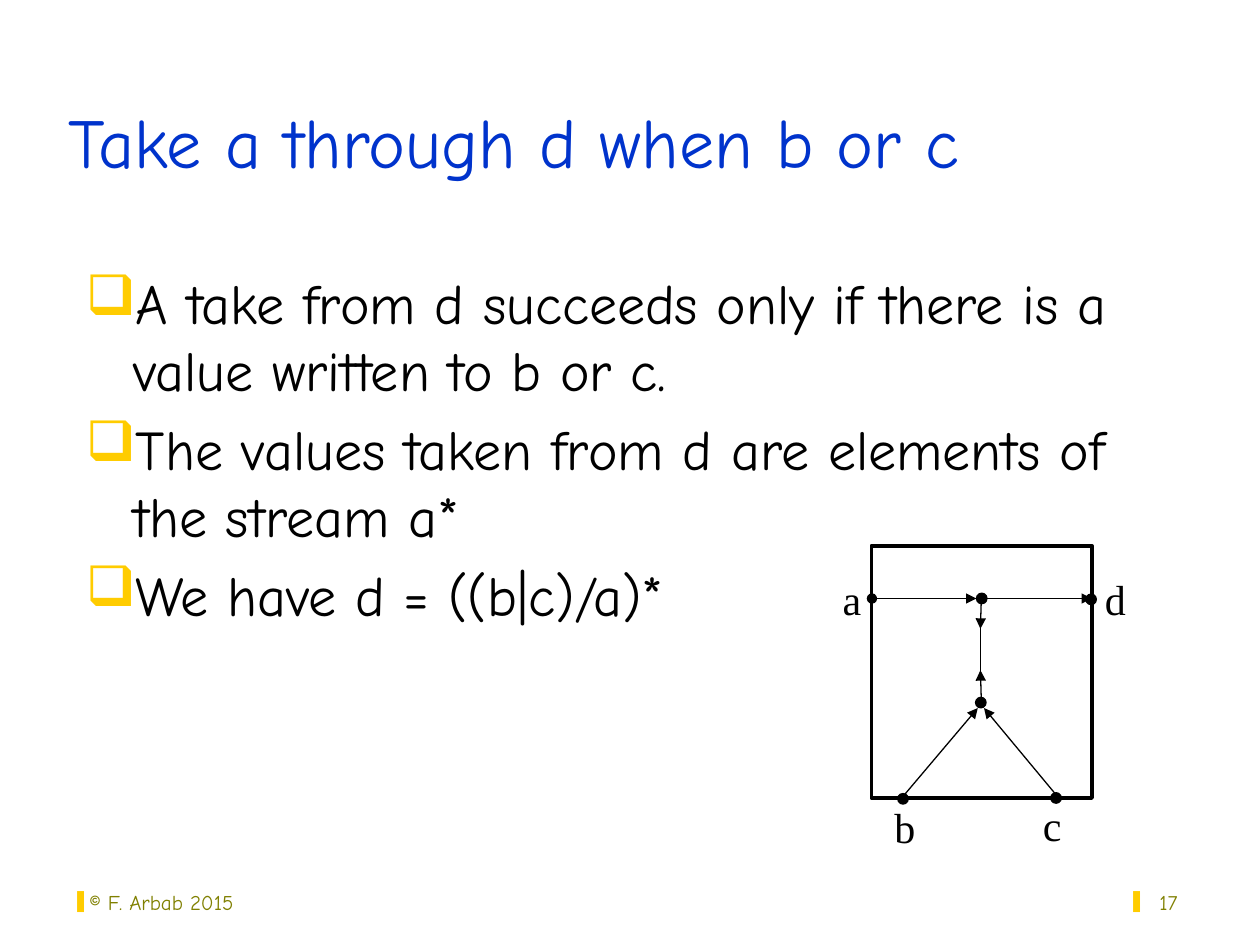
"""Build a slide on taking a through d, with a small channel circuit."""
from lxml.etree import SubElement
from pptx import Presentation
from pptx.dml.color import RGBColor
from pptx.enum.shapes import MSO_CONNECTOR, MSO_SHAPE
from pptx.enum.text import MSO_ANCHOR, PP_ALIGN
from pptx.oxml.ns import qn
from pptx.util import Pt

BLACK = RGBColor(0x00, 0x00, 0x00)
WHITE = RGBColor(0xFF, 0xFF, 0xFF)
BLUE = RGBColor(0x00, 0x33, 0xCC)
OLIVE = RGBColor(0x80, 0x80, 0x00)
GOLD = RGBColor(0xFF, 0xCC, 0x00)
COMIC = "Comic Neue"
ROMAN = "Times New Roman"

POINTS = [
    "A take from d succeeds only if there is a value written to b or c.",
    "The values taken from d are elements of the stream a*",
    "We have d = ((b|c)/a)*",
]
LABELS = [("a", 473.75, 324), ("b", 504, 454.3), ("c", 588.25, 453.6), ("d", 624.25, 324)]
NODES = [(561, 342), (623.5, 342.5), (516, 456.5), (603.5, 456), (560.5, 401.5)]
EDGES = [
    (558, 342, 624, 342, None, "triangle"),
    (558, 342, 498.25, 342, "triangle", "oval"),
    (560.75, 400.3, 560.25, 383, None, "triangle"),
    (560.75, 342, 560.25, 359.3, None, "triangle"),
    (560.25, 355, 560.25, 388.8, None, None),
    (515.5, 455.75, 558.75, 404.6, None, "triangle"),
    (604.8, 455.75, 562.3, 404.6, None, "triangle"),
]


def add_bullet(para, mark, hang):
    """Give a paragraph a gold bullet with a hanging indent."""
    props = para._p.get_or_add_pPr()
    props.set("marL", str(Pt(hang)))
    props.set("indent", str(-Pt(hang)))
    tint = SubElement(props, qn("a:buClr"))
    SubElement(tint, qn("a:srgbClr"), val=str(GOLD))
    SubElement(props, qn("a:buChar"), char=mark)


def add_text(slide, lines, left, top, width, height, *, size, font=COMIC,
             color=BLACK, align=PP_ALIGN.LEFT, anchor=MSO_ANCHOR.TOP,
             wrap=True, mark=None, hang=0, gap=0):
    """Add a text box with one paragraph for each line."""
    box = slide.shapes.add_textbox(Pt(left), Pt(top), Pt(width), Pt(height))
    frame = box.text_frame
    frame.word_wrap = wrap
    frame.vertical_anchor = anchor
    for index, line in enumerate(lines):
        para = frame.add_paragraph() if index else frame.paragraphs[0]
        if mark:
            add_bullet(para, mark, hang)
        para.alignment = align
        if index:
            para.space_before = Pt(gap)
        run = para.add_run()
        run.text = line
        run.font.size = Pt(size)
        run.font.name = font
        run.font.color.rgb = color


def add_form(slide, kind, left, top, width, height, fill, weight):
    """Add a filled shape with a black outline."""
    form = slide.shapes.add_shape(kind, Pt(left), Pt(top), Pt(width), Pt(height))
    form.shadow.inherit = False
    form.fill.solid()
    form.fill.fore_color.rgb = fill
    form.line.color.rgb = BLACK
    form.line.width = Pt(weight)


def add_edge(slide, x1, y1, x2, y2, head, tail):
    """Add a thin black line with optional ends."""
    edge = slide.shapes.add_connector(
        MSO_CONNECTOR.STRAIGHT, Pt(x1), Pt(y1), Pt(x2), Pt(y2))
    edge.line.color.rgb = BLACK
    edge.line.width = Pt(0.75)
    stroke = edge.line._get_or_add_ln()
    for tag, kind in (("a:headEnd", head), ("a:tailEnd", tail)):
        if kind:
            SubElement(stroke, qn(tag), type=kind)
    SubElement(edge._element.spPr, qn("a:effectLst"))


def add_circuit(slide):
    """Draw the frame, channels, nodes and port labels."""
    add_form(slide, MSO_SHAPE.RECTANGLE, 498, 312, 126, 144, WHITE, 2.25)
    for edge in EDGES:
        add_edge(slide, *edge)
    for x, y in NODES:
        add_form(slide, MSO_SHAPE.OVAL, x - 3, y - 3, 6, 6, BLACK, 0.75)
    for name, left, top in LABELS:
        add_text(slide, [name], left, top, 26, 36, size=24, font=ROMAN,
                 align=PP_ALIGN.CENTER, wrap=False)


def main():
    """Build and save the slide."""
    deck = Presentation()
    deck.slide_width, deck.slide_height = Pt(720), Pt(540)
    slide = deck.slides.add_slide(deck.slide_layouts[6])
    foot = {"size": 12, "color": OLIVE, "anchor": MSO_ANCHOR.BOTTOM, "mark": "❚"}
    add_text(slide, ["© F. Arbab 2015"], 34, 490.5, 150, 36, **foot)
    add_text(slide, ["17"], 530, 490.5, 150, 36, align=PP_ALIGN.RIGHT, hang=18, **foot)
    add_text(slide, ["Take a through d when b or c"], 32, 18, 612, 90,
             size=40, color=BLUE, anchor=MSO_ANCHOR.BOTTOM)
    add_text(slide, POINTS, 42, 150, 644, 328, size=32, mark="❑", hang=27, gap=6.4)
    add_circuit(slide)
    deck.save("out.pptx")


if __name__ == "__main__":
    main()
